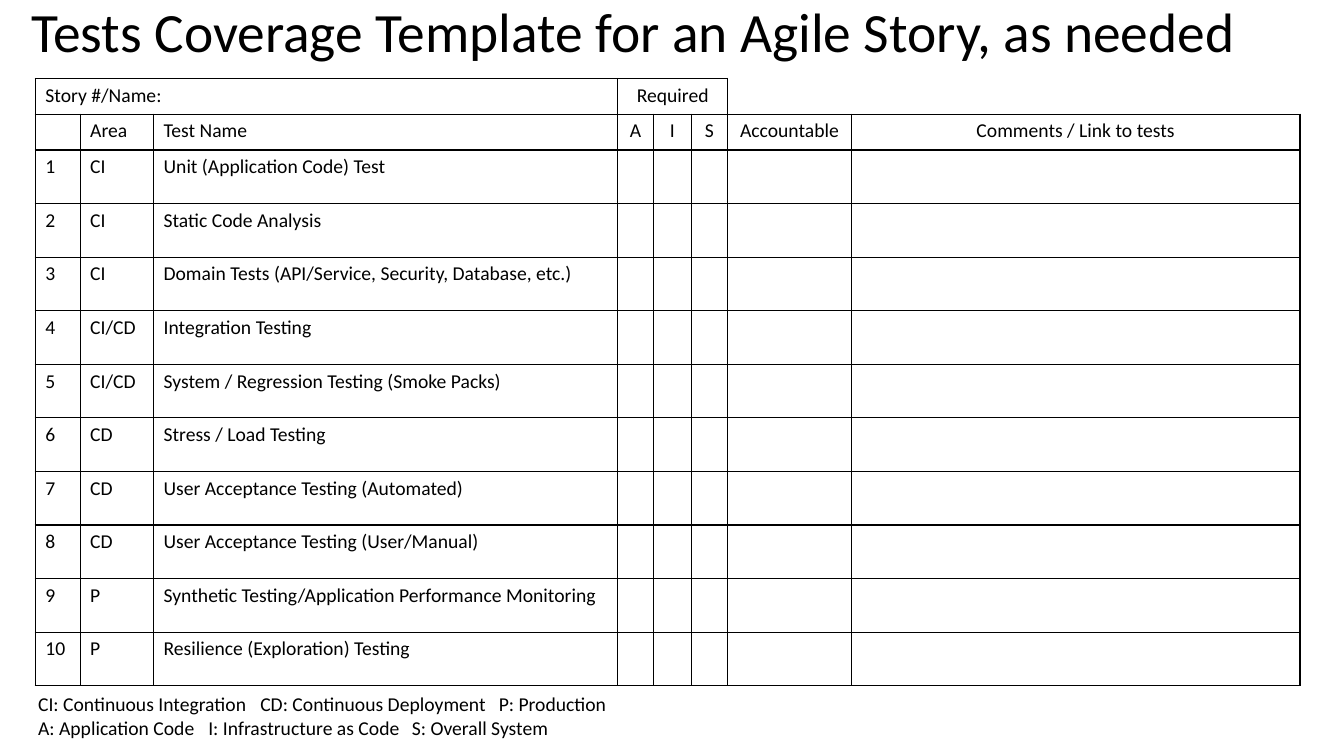
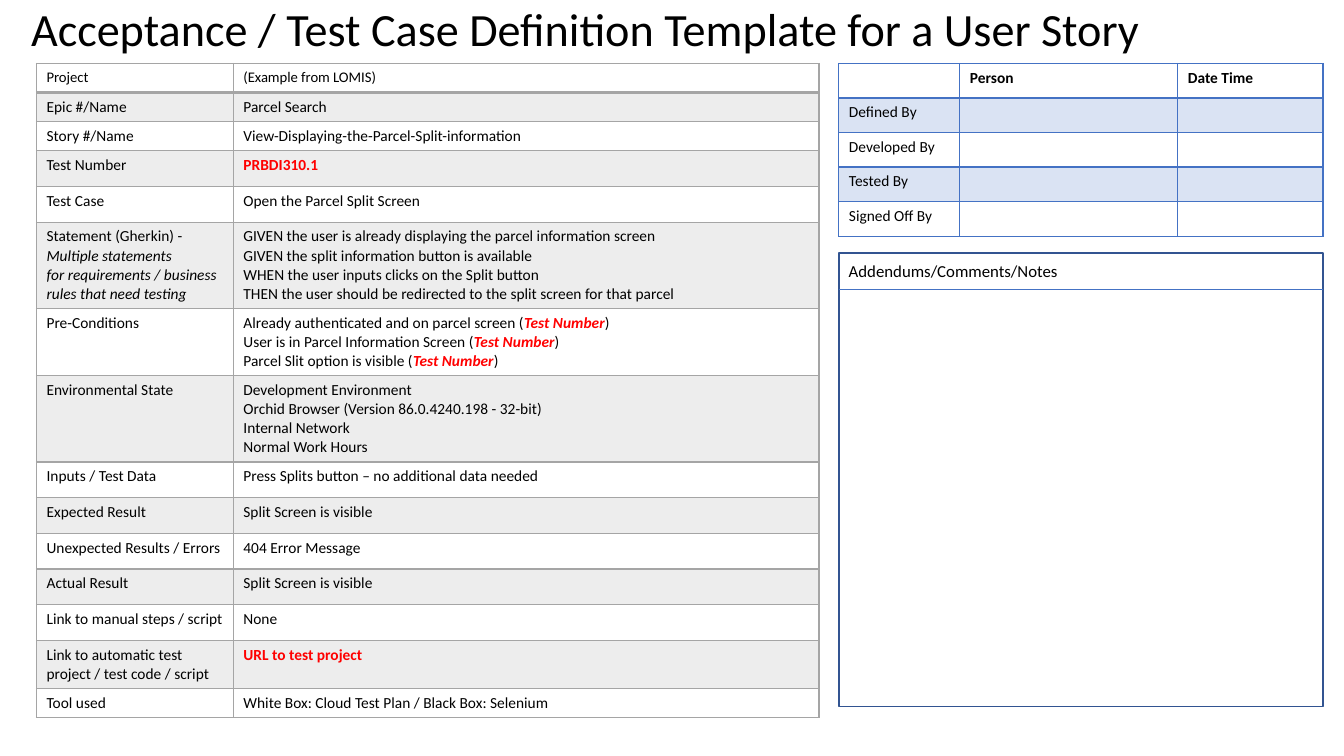
from lxml import etree
from pptx import Presentation
from pptx import util as u
from pptx.dml.color import RGBColor
from pptx.enum import shapes, text
from pptx.oxml import ns

HUES = {"ink": "000000", "red": "FF0000", "gray": "A5A5A5", "pale": "EDEDED",
        "blue": "4472C4", "sky": "DAE3F3", "navy": "325491"}
FONT = "Calibri"
ALIGN = text.PP_ALIGN
RED = {"hue": "red", "bold": True}
TERM = {**RED, "italic": True}
NOTE = {"italic": True}


def rgb(hue):
    return RGBColor.from_string(HUES[hue])


def sub(node, tag, **attrs):
    return etree.SubElement(node, ns.qn(tag), **attrs)


def style(font, size, hue="ink", bold=False, italic=False):
    font.name, font.size = FONT, u.Pt(size)
    font.bold, font.italic = bold, italic
    font.color.rgb = rgb(hue)


def write(frame, words, size=11, align=ALIGN.LEFT, space=None, bold=False, mark=None, tabs=()):
    for i, line in enumerate(words.split("\n")):
        para = frame.paragraphs[0] if i == 0 else frame.add_paragraph()
        para.alignment = align
        if space:
            para.line_spacing = space
        if tabs:
            stops = sub(para._p.get_or_add_pPr(), "a:tabLst")
            for stop in tabs[i]:
                sub(stops, "a:tab", pos=str(u.Cm(stop)), algn="l")
        for j, part in enumerate(line.split("*")):
            if part:
                run = para.add_run()
                run.text = part
                style(run.font, size, **(mark if j % 2 else {"bold": bold}))
        if not line:
            sub(para._p, "a:endParaRPr", sz=str(size * 100))


def edge(cell, hue, sides):
    props = cell._tc.get_or_add_tcPr()
    for i, side in enumerate("LRTB"):
        width = sides.get(side, 0)
        line = etree.Element(ns.qn("a:ln" + side), w=str(u.Pt(width)))
        if width:
            sub(sub(line, "a:solidFill"), "a:srgbClr", val=HUES[hue])
        else:
            sub(line, "a:noFill")
        props.insert(i, line)


class Deck:
    def __init__(self):
        self.show = Presentation()
        self.show.slide_width, self.show.slide_height = u.Cm(33.87), u.Cm(19.05)
        self.slide = None

    def page(self, words, size, space):
        self.slide = self.show.slides.add_slide(self.show.slide_layouts[5])
        title = self.slide.shapes.title
        title.left, title.top = u.Cm(0.53), u.Cm(0.03)
        title.width, title.height = u.Cm(32.4), u.Cm(1.7)
        frame = title.text_frame
        frame.auto_size = text.MSO_AUTO_SIZE.NONE
        frame.vertical_anchor = text.MSO_ANCHOR.MIDDLE
        write(frame, words, size=size, space=space)

    def label(self, x, y, w, h, words, **form):
        frame = self.slide.shapes.add_textbox(*map(u.Cm, (x, y, w, h))).text_frame
        frame.word_wrap = False
        write(frame, words, **form)

    def grid(self, x, y, cols, highs, rows, hue, band=None, head=1, **form):
        table = self.slide.shapes.add_table(
            len(rows), len(cols), *map(u.Cm, (x, y, sum(cols), sum(highs)))).table
        table.first_row = table.horz_banding = False
        for col, width in zip(table.columns, cols):
            col.width = u.Cm(width)
        for r, row in enumerate(rows):
            table.rows[r].height = u.Cm(highs[r])
            for c, item in enumerate(row):
                cell = table.cell(r, c)
                words, extra = item if isinstance(item, tuple) else (item, {})
                write(cell.text_frame, words, **{**form, **extra})
                if band and r % 2:
                    cell.fill.solid()
                    cell.fill.fore_color.rgb = rgb(band)
                else:
                    cell.fill.background()
                edge(cell, hue, {"L": 1, "R": 1, "T": head if r == 1 else 1,
                                 "B": head if r == 0 else 1})
        return table

    def box(self, x, y, w, h, hue):
        shape = self.slide.shapes.add_shape(
            shapes.MSO_SHAPE.RECTANGLE, *map(u.Cm, (x, y, w, h)))
        shape.shadow.inherit = False
        shape.fill.background()
        shape.line.color.rgb, shape.line.width = rgb(hue), u.Pt(1)

    def rule(self, x, y, w, hue):
        line = self.slide.shapes.add_connector(
            shapes.MSO_CONNECTOR.STRAIGHT, *map(u.Cm, (x, y, x + w, y)))
        line.line.color.rgb, line.line.width = rgb(hue), u.Pt(0.5)
        sub(line._element.spPr, "a:effectLst")


def cover(deck):
    deck.page("Tests Coverage Template for an Agile Story, as needed", 39.6, 0.9)
    mid = {"align": ALIGN.CENTER}
    tests = [("CI", "Unit (Application Code) Test"),
             ("CI", "Static Code Analysis"),
             ("CI", "Domain Tests (API/Service, Security, Database, etc.)"),
             ("CI/CD", "Integration Testing"),
             ("CI/CD", "System / Regression Testing (Smoke Packs)"),
             ("CD", "Stress / Load Testing"),
             ("CD", "User Acceptance Testing (Automated)"),
             ("CD", "User Acceptance Testing (User/Manual)"),
             ("P", "Synthetic Testing/Application Performance Monitoring"),
             ("P", "Resilience (Exploration) Testing")]
    heads = ["A", "I", "S", "Accountable", "Comments / Link to tests"]
    rows = [["Story #/Name:", "", "", ("Required", mid), "", "", "", ""],
            ["", "Area", "Test Name"] + [(head, mid) for head in heads]]
    rows += [[str(n), *test] + [""] * 5 for n, test in enumerate(tests, 1)]
    table = deck.grid(0.89, 1.98, [1.13, 1.85, 11.7, 0.9, 0.95, 0.92, 3.12, 11.3],
                      [0.9] * 2 + [1.35] * 10, rows, "ink", size=14)
    for c in (0, 3):
        table.cell(0, c).merge(table.cell(0, c + 2))
    for c, sides in ((6, {"L": 1, "B": 1}), (7, {"B": 1})):
        props = table.cell(0, c)._tc.tcPr
        for line in list(props)[:4]:
            props.remove(line)
        edge(table.cell(0, c), "ink", sides)
    deck.label(0.71, 17.32, 14.96, 1.45,
               "CI: Continuous Integration\tCD: Continuous Deployment\tP: Production\n"
               "A: Application Code\tI: Infrastructure as Code\tS: Overall System",
               size=14, tabs=((5.6, 11.61), (4.29, 9.42)))


def case(deck):
    deck.page("Acceptance / Test Case Definition Template for a User Story", 33, 0.7)
    small = {"size": 10.5}
    rows = [
        (0.73, ("Project", small), ("(Example from LOMIS)", small)),
        (0.73, "Epic #/Name", "Parcel Search"),
        (0.73, "Story #/Name", "View-Displaying-the-Parcel-Split-information"),
        (0.9, "Test Number", ("*PRBDI310.1*", {"mark": RED})),
        (0.9, "Test Case", "Open the Parcel Split Screen"),
        (2.17, ("Statement (Gherkin) -\n*Multiple statements*\n"
                "*for requirements / business rules that need testing*", {"mark": NOTE}),
         "GIVEN the user is already displaying the parcel information screen\n"
         "GIVEN the split information button is available\n"
         "WHEN the user inputs clicks on the Split button\n"
         "THEN the user should be redirected to the split screen for that parcel"),
        (1.7, "Pre-Conditions",
         ("Already authenticated and on parcel screen (*Test Number*)\n"
          "User is in Parcel Information Screen (*Test Number*)\n"
          "Parcel Slit option is visible (*Test Number*)", {"mark": TERM})),
        (2.17, "Environmental State",
         "Development Environment\nOrchid Browser (Version 86.0.4240.198 - 32-bit)\n"
         "Internal Network\nNormal Work Hours"),
        (0.9, "Inputs / Test Data", "Press Splits button – no additional data needed"),
        (0.9, "Expected Result", "Split Screen is visible"),
        (0.9, "Unexpected Results / Errors", "404 Error Message"),
        (0.9, "Actual Result", "Split Screen is visible"),
        (0.9, "Link to manual steps / script", "None"),
        (1.21, "Link to automatic test project / test code / script",
         ("*URL to test project*", {"mark": RED})),
        (0.73, "Tool used", "White Box: Cloud Test Plan / Black Box: Selenium")]
    deck.grid(0.92, 1.6, [4.96, 14.76], [row[0] for row in rows],
              [row[1:] for row in rows], "gray", "pale", head=2)
    bold = {"bold": True}
    roles = ["Defined By", "Developed By", "Tested By", "Signed Off By"]
    deck.grid(21.14, 1.6, [3.05, 5.49, 3.66], [0.87] * 5,
              [["", ("Person", bold), ("Date Time", bold)]] + [[role, "", ""] for role in roles],
              "blue", "sky", head=2)
    deck.box(21.14, 6.38, 12.2, 11.43, "navy")
    deck.label(21.14, 6.45, 5.84, 0.77, "Addendums/Comments/Notes", size=12)
    deck.rule(21.14, 7.3, 12.2, "blue")


def main():
    deck = Deck()
    cover(deck)
    case(deck)
    deck.show.save("out.pptx")


if __name__ == "__main__":
    main()
